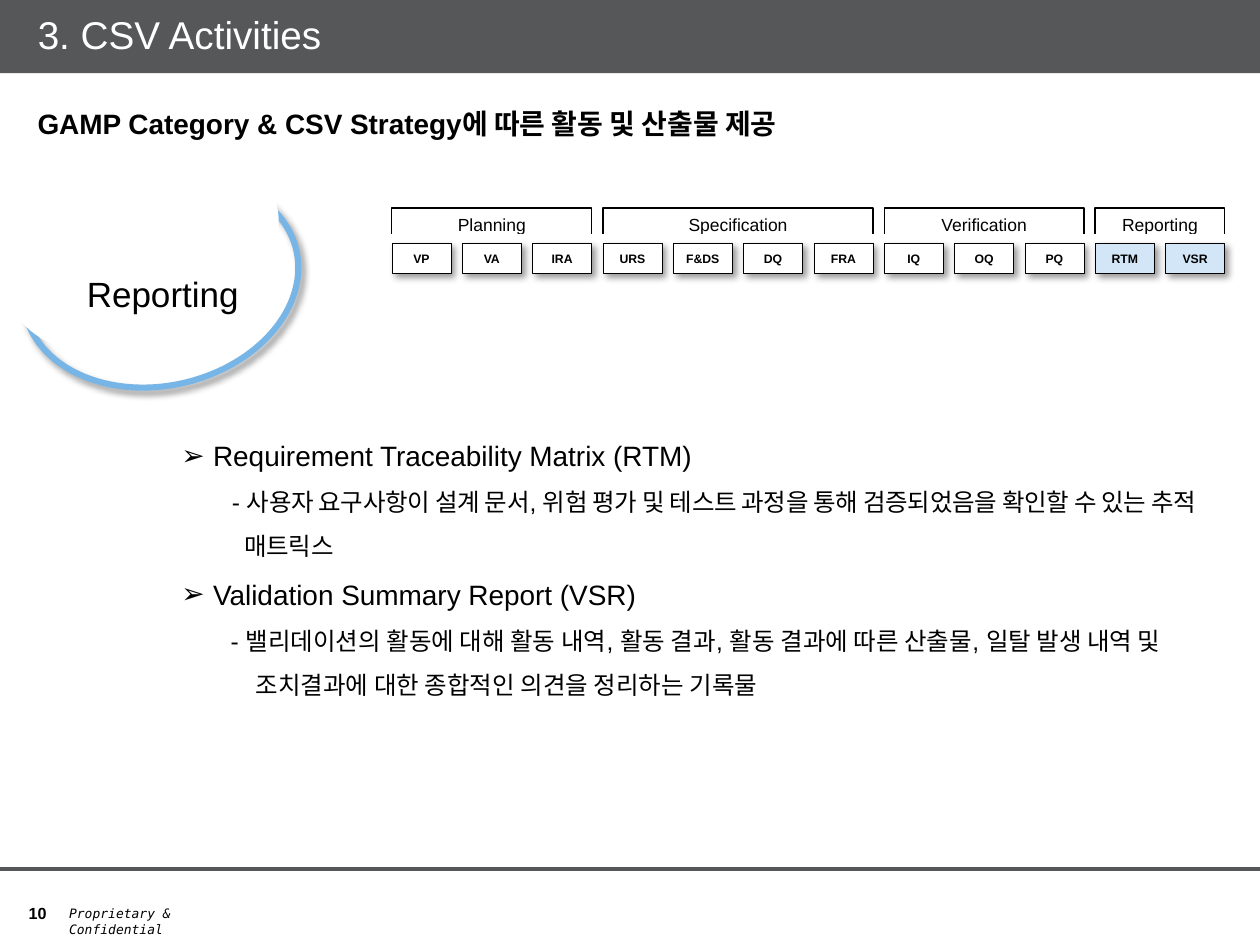
import pptx
import pptx.util
import pptx.dml.color
import pptx.enum.shapes
import pptx.enum.text
import pptx.oxml.ns
from lxml import etree

Inches = pptx.util.Inches
Pt = pptx.util.Pt
SHAPE = pptx.enum.shapes.MSO_SHAPE
ALIGN = pptx.enum.text.PP_ALIGN
ANCHOR = pptx.enum.text.MSO_ANCHOR
qn = pptx.oxml.ns.qn

COLORS = {
    "bar": "555759",
    "arc": "78B5E7",
    "active": "D2E6F7",
    "white": "FFFFFF",
    "black": "000000",
}
INSETS = (0.1, 0.05, 0.1, 0.05)

# Phases with their deliverables
PHASES = [
    ("Planning", ["VP", "VA", "IRA"]),
    ("Specification", ["URS", "F&DS", "DQ", "FRA"]),
    ("Verification", ["IQ", "OQ", "PQ"]),
    ("Reporting", ["RTM", "VSR"]),
]
ACTIVE_PHASE = "Reporting"
GRID_LEFT, GRID_RIGHT = 3.11, 9.72
BOX_WIDTH = 0.47
PITCH = (GRID_RIGHT - BOX_WIDTH - GRID_LEFT) / 11

# Report items: heading, detail runs with letter spacing, detail margin and indent
REPORTS = [
    (" Requirement Traceability Matrix (RTM)",
     [("- ", 0),
      ("사용자 요구사항이 설계 문서, 위험 평가 및 테스트 과정을 통해 "
       "검증되었음을 확인할 수 있는 추적 매트릭스", -20)],
     0.5, -0.1),
    (" Validation Summary Report (VSR)",
     [("- 밸리데이션의 활동에 대해 활동 내역, 활동 결과, 활동 결과에 따른 산출물, "
       "일탈 발생 내역 및 조치결과에 대한 종합적인 의견을 정리하는 기록물", 0)],
     0.59, -0.2),
]


def rgb(name):
    return pptx.dml.color.RGBColor.from_string(COLORS[name])


def add_shadow(shape):
    effects = shape._element.spPr.find(qn("a:effectLst"))
    shadow = etree.SubElement(effects, qn("a:outerShdw"), blurRad=str(Pt(4)),
                              dist=str(Pt(3)), dir="2700000", algn="tl", rotWithShape="0")
    color = etree.SubElement(shadow, qn("a:srgbClr"), val=COLORS["black"])
    etree.SubElement(color, qn("a:alpha"), val="40000")


def add_figure(slide, kind, box, fill=None, line=None, width=0.75, shadow=False, rotation=0):
    shape = slide.shapes.add_shape(kind, *map(Inches, box))
    shape.rotation = rotation
    shape.shadow.inherit = False
    if fill:
        shape.fill.solid()
        shape.fill.fore_color.rgb = rgb(fill)
    else:
        shape.fill.background()
    if line:
        shape.line.color.rgb = rgb(line)
        shape.line.width = Pt(width)
    else:
        shape.line.fill.background()
    if shadow:
        add_shadow(shape)
    return shape


def set_frame(shape, anchor=ANCHOR.TOP, insets=INSETS, wrap=True):
    frame = shape.text_frame
    frame.word_wrap = wrap
    frame.vertical_anchor = anchor
    (frame.margin_left, frame.margin_top,
     frame.margin_right, frame.margin_bottom) = map(Inches, insets)
    return frame


def add_run(paragraph, text, size, color="black", bold=False, italic=False,
            font="Arial", spacing=0):
    run = paragraph.add_run()
    run.text = text
    run.font.name = font
    run.font.size = Pt(size)
    run.font.bold = bold
    run.font.italic = italic
    run.font.color.rgb = rgb(color)
    if spacing:
        run._r.get_or_add_rPr().set("spc", str(spacing))


def write_line(frame, text, size, align=ALIGN.LEFT, **style):
    paragraph = frame.paragraphs[0]
    paragraph.alignment = align
    add_run(paragraph, text, size, **style)
    return paragraph


def add_label(slide, box, text, size, anchor=ANCHOR.TOP, wrap=True, align=ALIGN.LEFT, **style):
    label = slide.shapes.add_textbox(*map(Inches, box))
    write_line(set_frame(label, anchor, wrap=wrap), text, size, align, **style)


def set_indent(paragraph, margin, indent, bullet=None):
    properties = paragraph._p.get_or_add_pPr()
    properties.set("marL", str(Inches(margin)))
    properties.set("indent", str(Inches(indent)))
    paragraph.line_spacing = 1.5
    if bullet:
        etree.SubElement(properties, qn("a:buFont"), typeface="Arial")
        etree.SubElement(properties, qn("a:buChar"), char=bullet)
    else:
        etree.SubElement(properties, qn("a:buNone"))


def add_footer(slide):
    add_label(slide, (0.13, 6.98, 1.43, 0.39), "10", 9.2, ANCHOR.BOTTOM, bold=True)
    add_label(slide, (0.45, 7.14, 1.38, 0.23), "Proprietary & Confidential", 7.4,
              italic=True, font="DejaVu Sans Mono")
    rule = slide.shapes.add_connector(pptx.enum.shapes.MSO_CONNECTOR.STRAIGHT,
                                      Inches(0), Inches(6.9), Inches(10), Inches(6.9))
    rule.line.color.rgb = rgb("bar")
    rule.line.width = Pt(2.25)
    etree.SubElement(rule._element.spPr, qn("a:effectLst"))


def add_title(slide):
    bar = add_figure(slide, SHAPE.RECTANGLE, (0, 0, 10, 0.58), "bar")
    frame = set_frame(bar, ANCHOR.MIDDLE, (0.3, 0.05, 0.05, 0.05))
    write_line(frame, "3. CSV Activities", 22.1, color="white").line_spacing = 0.95


def add_stage_badge(slide):
    # The white ellipse hides all but the lower right arc
    add_figure(slide, SHAPE.OVAL, (0.17, 1.41, 2.21, 1.65), line="arc", width=3.5,
               shadow=True, rotation=346.9)
    add_figure(slide, SHAPE.OVAL, (-0.02, 1.15, 2.27, 1.62), "white", rotation=338.5)
    add_label(slide, (0.59, 2.11, 1.42, 0.44), "Reporting", 20, wrap=False)


def add_phases(slide):
    # Phase brackets, cut off below by a white strip
    left = GRID_LEFT
    for phase, steps in PHASES:
        width = (len(steps) - 1) * PITCH + BOX_WIDTH
        bracket = add_figure(slide, SHAPE.RECTANGLE, (left, 1.65, width, 0.42),
                             "white", "black")
        write_line(set_frame(bracket), phase, 10, ALIGN.CENTER)
        left += len(steps) * PITCH
    add_figure(slide, SHAPE.RECTANGLE, (2.72, 1.86, 7.12, 0.23), "white", "white")

    # Deliverable boxes
    deliverables = [(phase, step) for phase, steps in PHASES for step in steps]
    for column, (phase, step) in enumerate(deliverables):
        fill = "active" if phase == ACTIVE_PHASE else "white"
        box = add_figure(slide, SHAPE.RECTANGLE,
                         (GRID_LEFT + column * PITCH, 1.93, BOX_WIDTH, 0.24),
                         fill, "black", 0.25, shadow=True)
        frame = set_frame(box, ANCHOR.MIDDLE, (0, 0, 0, 0))
        write_line(frame, step, 7, ALIGN.CENTER, bold=True)


def add_reports(slide):
    panel = add_figure(slide, SHAPE.RECTANGLE, (1.36, 3.33, 8.37, 2.24), "white", "white")
    frame = set_frame(panel, ANCHOR.MIDDLE, (0.08, 0, 0.02, 0))
    for index, (heading, details, margin, indent) in enumerate(REPORTS):
        item = frame.add_paragraph() if index else frame.paragraphs[0]
        item.alignment = ALIGN.LEFT
        set_indent(item, 0.19, -0.19, "➢")
        add_run(item, heading, 16)
        detail = frame.add_paragraph()
        detail.alignment = ALIGN.LEFT
        detail.level = 1
        set_indent(detail, margin, indent)
        for text, spacing in details:
            add_run(detail, text, 14, spacing=spacing)


def main():
    deck = pptx.Presentation()
    deck.slide_width, deck.slide_height = Inches(10), Inches(7.5)
    slide = deck.slides.add_slide(deck.slide_layouts[6])
    add_footer(slide)
    add_title(slide)
    add_stage_badge(slide)
    add_phases(slide)
    add_label(slide, (0.2, 0.8, 10.36, 0.37),
              "GAMP Category & CSV Strategy에 따른 활동 및 산출물 제공", 16,
              align=ALIGN.JUSTIFY, bold=True)
    add_reports(slide)
    deck.save("out.pptx")


if __name__ == "__main__":
    main()
